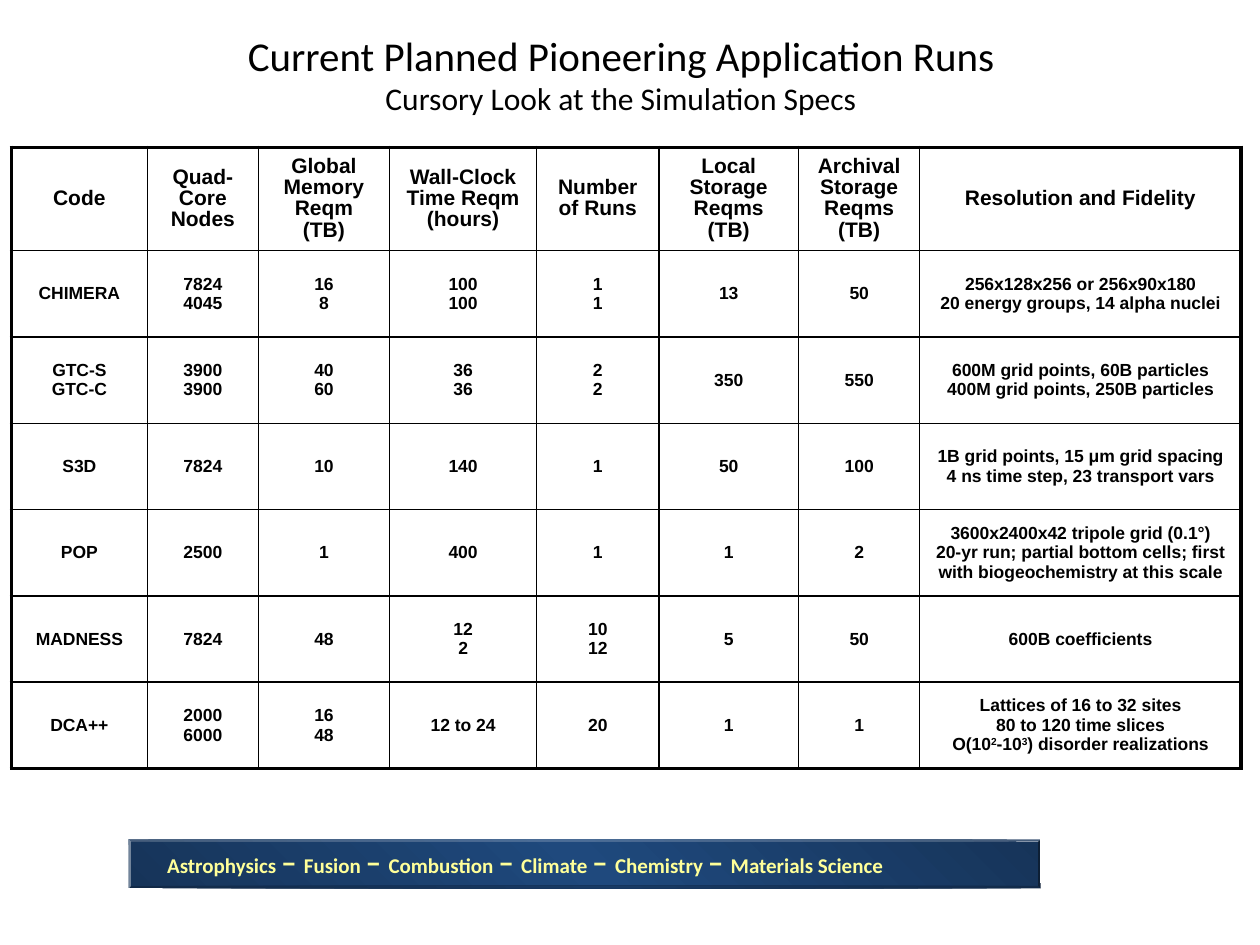
from dataclasses import dataclass

from lxml.etree import SubElement
from pptx import Presentation
from pptx.dml.color import RGBColor
from pptx.enum.shapes import MSO_SHAPE as Preset
from pptx.enum.text import MSO_ANCHOR as Anchor, PP_ALIGN as Align
from pptx.oxml import parse_xml
from pptx.oxml.ns import nsdecls, qn
from pptx.util import Cm, Pt

BLACK = RGBColor(0x00, 0x00, 0x00)
YELLOW = RGBColor(0xFF, 0xFF, 0x99)
NAVY = RGBColor(0x16, 0x34, 0x59)
BLUE = RGBColor(0x1F, 0x49, 0x7D)

THIN, THICK = Pt(1), Pt(2.25)
TITLE = {"name": "Calibri", "size": Pt(23.4), "bold": False}
SUBTITLE = TITLE | {"size": Pt(18)}
HEADER = {"name": "Arial", "size": Pt(12), "bold": True}
BODY = HEADER | {"size": Pt(10)}
FIELD = {"name": "Calibri", "size": Pt(12), "bold": True}
DASH = FIELD | {"size": Pt(18)}


@dataclass
class Area:
    left: float
    top: float
    width: float
    height: float

    def lengths(self) -> tuple:
        return Cm(self.left), Cm(self.top), Cm(self.width), Cm(self.height)


@dataclass
class Column:
    heading: str
    width: float


TITLE_AREA = Area(0.33, 0.43, 24.38, 2.11)
TABLE_AREA = Area(0.23, 2.97, 24.79, 12.5)
BANNER_AREA = Area(2.59, 16.92, 18.39, 0.99)
FIELDS_AREA = Area(3.12, 16.99, 17.7, 0.84)

COLUMNS = [
    Column("Code", 2.74),
    Column("Quad-Core Nodes", 2.24),
    Column("Global Memory Reqm (TB)", 2.64),
    Column("Wall-Clock Time Reqm (hours)", 2.97),
    Column("Number of Runs", 2.46),
    Column("Local Storage Reqms (TB)", 2.82),
    Column("Archival Storage Reqms (TB)", 2.44),
    Column("Resolution and Fidelity", 6.48),
]
ROW_HEIGHT = 1.74

# A line break starts a new paragraph; carets enclose superscripts
RUNS = [
    ["CHIMERA", "7824\n4045", "16\n8", "100\n100", "1\n1", "13", "50",
     "256x128x256 or 256x90x180\n20 energy groups, 14 alpha nuclei"],
    ["GTC-S\nGTC-C", "3900\n3900", "40\n60", "36\n36", "2\n2", "350", "550",
     "600M grid points, 60B particles\n400M grid points, 250B particles"],
    ["S3D", "7824", "10", "140", "1", "50", "100",
     "1B grid points, 15 μm grid spacing\n4 ns time step, 23 transport vars"],
    ["POP", "2500", "1", "400", "1", "1", "2",
     "3600x2400x42 tripole grid (0.1°)\n"
     "20-yr run; partial bottom cells; first with biogeochemistry at this scale"],
    ["MADNESS", "7824", "48", "12\n2", "10\n12", "5", "50", "600B coefficients"],
    ["DCA++", "2000\n6000", "16\n48", "12 to 24", "20", "1", "1",
     "Lattices of 16 to 32 sites\n80 to 120 time slices\n"
     "O(10^2^-10^3^) disorder realizations"],
]
FIELDS = ["Astrophysics", "Fusion", "Combustion", "Climate", "Chemistry",
          "Materials Science"]


def add_span(para, text: str, style: dict, color: RGBColor = BLACK):
    span = para.add_run()
    span.text = text
    for name, value in style.items():
        setattr(span.font, name, value)
    span.font.color.rgb = color
    return span


def tighten(para) -> None:
    """Set 90% lines with 60% of a line before the paragraph."""
    para.line_spacing = 0.9
    before = SubElement(para._p.get_or_add_pPr(), qn("a:spcBef"))
    SubElement(before, qn("a:spcPct"), val="60000")


def add_box(shapes, area: Area):
    """Add a wrapping, vertically centred box and return its first paragraph."""
    frame = shapes.add_textbox(*area.lengths()).text_frame
    frame.word_wrap = True
    frame.vertical_anchor = Anchor.MIDDLE
    return frame.paragraphs[0]


def set_borders(cell, widths: dict) -> None:
    properties = cell._tc.get_or_add_tcPr()
    for index, (side, width) in enumerate(widths.items()):
        properties.insert(index, parse_xml(
            f'<a:ln{side} {nsdecls("a")} w="{int(width)}"><a:solidFill>'
            f'<a:srgbClr val="{BLACK}"/></a:solidFill></a:ln{side}>'))


def fill_cell(cell, text: str, style: dict) -> None:
    cell.fill.background()
    cell.vertical_anchor = Anchor.MIDDLE
    frame = cell.text_frame
    for number, line in enumerate(text.split("\n")):
        para = frame.add_paragraph() if number else frame.paragraphs[0]
        para.alignment = Align.CENTER
        if style is HEADER:
            tighten(para)
        for part, piece in enumerate(line.split("^")):
            span = add_span(para, piece, style)
            if part % 2:
                span.font._element.set("baseline", "30000")


def draw_title(page) -> None:
    para = add_box(page.shapes, TITLE_AREA)
    para.alignment = Align.CENTER
    add_span(para, "Current Planned Pioneering Application Runs", TITLE)
    para.add_line_break()
    add_span(para, "Cursory Look at the Simulation Specs", SUBTITLE)


def draw_table(page) -> None:
    rows = [[column.heading for column in COLUMNS], *RUNS]
    last_row, last_column = len(rows) - 1, len(COLUMNS) - 1
    table = page.shapes.add_table(
        len(rows), len(COLUMNS), *TABLE_AREA.lengths()).table
    table.first_row = table.horz_banding = False
    for place, column in zip(table.columns, COLUMNS):
        place.width = Cm(column.width)
    for r, texts in enumerate(rows):
        table.rows[r].height = Cm(ROW_HEIGHT)
        for c, text in enumerate(texts):
            cell = table.cell(r, c)
            fill_cell(cell, text, BODY if r else HEADER)
            outer = {"L": c == 0, "R": c == last_column,
                     "T": r == 0, "B": r == last_row}
            set_borders(cell, {side: THICK if edge else THIN
                               for side, edge in outer.items()})


def draw_banner(page) -> None:
    group = page.shapes.add_group_shape()
    bar = group.shapes.add_shape(Preset.BEVEL, *BANNER_AREA.lengths())
    bar.adjustments[0] = 0.05
    bar.shadow.inherit = False
    bar.line.fill.background()
    stops = "".join(
        f'<a:gs pos="{share * 1000}"><a:srgbClr val="{color}"/></a:gs>'
        for share, color in ((0, NAVY), (50, BLUE), (100, NAVY)))
    bar._element.spPr.find(qn("a:prstGeom")).addnext(parse_xml(
        f'<a:gradFill {nsdecls("a")}><a:gsLst>{stops}</a:gsLst>'
        f'<a:lin ang="{315 * 60000}" scaled="0"/></a:gradFill>'))

    # Science fields joined by larger dashes
    para = add_box(group.shapes, FIELDS_AREA)
    tighten(para)
    indent = int(Cm(0.48))
    para._p.pPr.set("marL", str(indent))
    para._p.pPr.set("indent", str(-indent))
    for field in FIELDS[:-1]:
        add_span(para, f"{field} ", FIELD, YELLOW)
        add_span(para, "– ", DASH, YELLOW)
    add_span(para, FIELDS[-1], FIELD, YELLOW)


def main() -> None:
    deck = Presentation()
    deck.slide_width, deck.slide_height = Cm(25.4), Cm(19.05)
    page = deck.slides.add_slide(deck.slide_layouts[6])
    draw_title(page)
    draw_table(page)
    draw_banner(page)
    deck.save("out.pptx")


if __name__ == "__main__":
    main()
